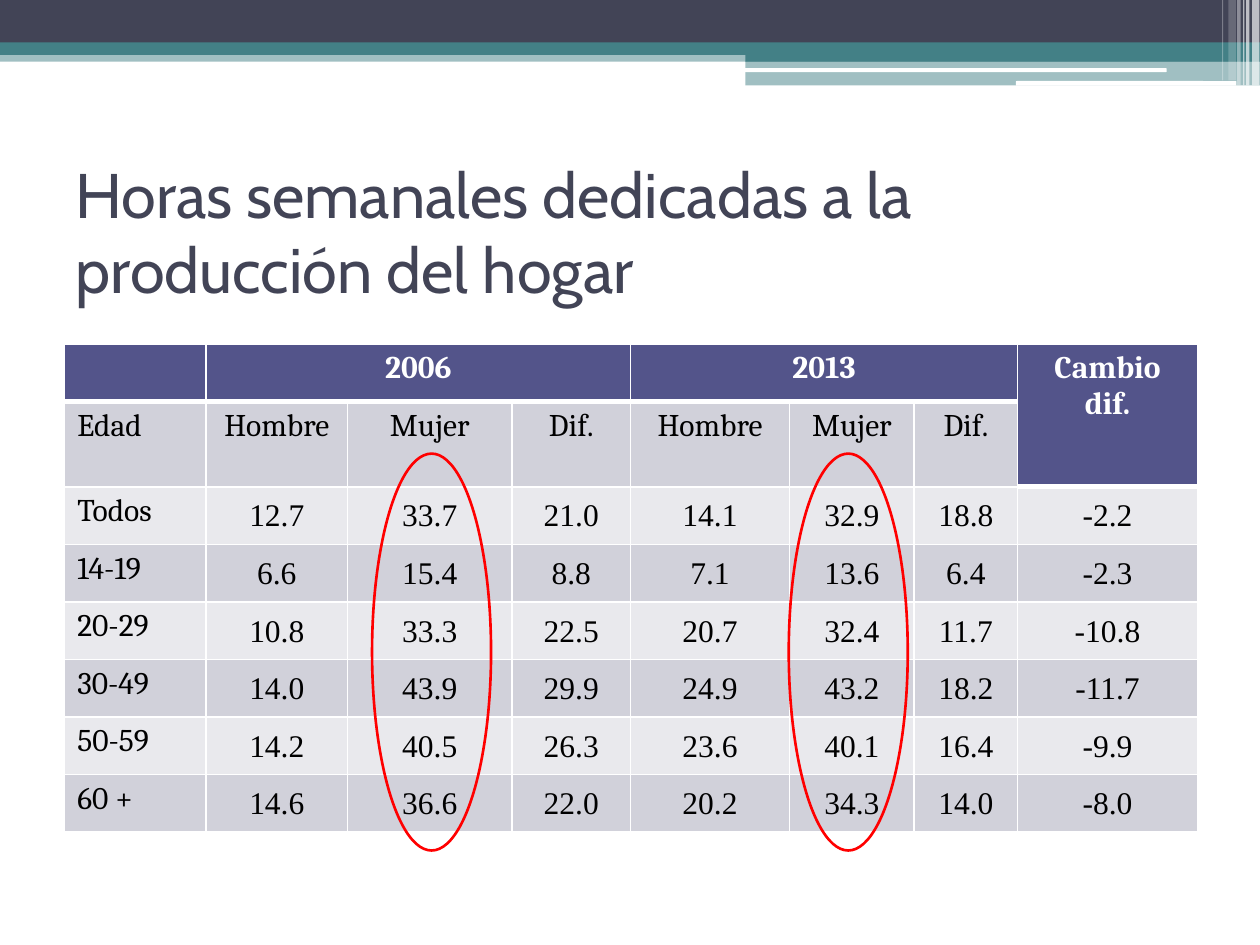
"""Build the slide on weekly hours spent on household production."""
from lxml import etree
from pptx import Presentation
from pptx.dml.color import RGBColor
from pptx.enum.shapes import MSO_SHAPE
from pptx.enum.text import MSO_ANCHOR, MSO_AUTO_SIZE, PP_ALIGN
from pptx.oxml.ns import qn
from pptx.util import Pt

RECT, ROUND, OVAL = MSO_SHAPE.RECTANGLE, MSO_SHAPE.ROUNDED_RECTANGLE, MSO_SHAPE.OVAL
LEFT, CENTER = PP_ALIGN.LEFT, PP_ALIGN.CENTER
TOP, MIDDLE = MSO_ANCHOR.TOP, MSO_ANCHOR.MIDDLE
NO_AUTOFIT = MSO_AUTO_SIZE.NONE

COLORS = {
    "ink": "424456", "teal": "438086", "white": "FFFFFF", "black": "000000",
    "header": "53548A", "dark_row": "D1D1DA", "light_row": "E9E9ED", "ring": "FF0000",
}
BANDS = [
    (RECT, 0, 28.8, 720, 6.5, "teal", 50),
    (RECT, 0, 0, 720, 24.5, "ink", 100),
    (RECT, 0, 24.2, 720, 7.2, "teal", 100),
    (RECT, 426, 28, 294, 7.2, "teal", 100),
    (RECT, 426, 34.8, 294, 14, "teal", 50),
    (ROUND, 425.5, 39, 241.2, 2.2, "white", 100),
    (ROUND, 580.5, 46.3, 126, 2.7, "white", 100),
]
STRIPES = [
    (715.5, 4.2, 48.8, 65), (712, 2, 48.8, 65), (710.4, 0.7, 48.8, 60),
    (707, 2, 48.8, 40), (702, 4.3, 46, 20), (698.3, 0.7, 46, 30),
]
COLUMN_WIDTHS = [80.8, 80.8, 94, 67.8, 90.8, 71.3, 59, 102.9]
ROW_HEIGHT = 32.9
HEADER = ["", "2006", "", "", "2013", "", "", "Cambio dif."]
SUBHEADER = ["Edad"] + ["Hombre", "Mujer", "Dif."] * 2 + [""]
HOURS = [
    ["Todos", "12.7", "33.7", "21.0", "14.1", "32.9", "18.8", "-2.2"],
    ["14-19", "6.6", "15.4", "8.8", "7.1", "13.6", "6.4", "-2.3"],
    ["20-29", "10.8", "33.3", "22.5", "20.7", "32.4", "11.7", "-10.8"],
    ["30-49", "14.0", "43.9", "29.9", "24.9", "43.2", "18.2", "-11.7"],
    ["50-59", "14.2", "40.5", "26.3", "23.6", "40.1", "16.4", "-9.9"],
    ["60 +", "14.6", "36.6", "22.0", "20.2", "34.3", "14.0", "-8.0"],
]
MERGES = [(0, 1, 0, 3), (0, 4, 0, 6), (0, 7, 1, 7)]


def color(name):
    """Return a named colour."""
    return RGBColor.from_string(COLORS[name])


def apply(target, values):
    """Set each attribute of the target from a dict."""
    for name, value in values.items():
        setattr(target, name, value)


class SlideBuilder:
    """Hold the current page and the text style, and add elements to it."""

    def __init__(self, page):
        """Keep the page and the shared table text style."""
        self.page = page
        self.cell_font = {"name": "Cambria", "size": Pt(18), "bold": False}

    def place(self, kind, left, top, width, height):
        """Add a preset shape without a shadow."""
        box = self.page.shapes.add_shape(kind, Pt(left), Pt(top), Pt(width), Pt(height))
        box.shadow.inherit = False
        return box

    def band(self, kind, left, top, width, height, fill, opacity):
        """Add a borderless band with the given opacity in percent."""
        box = self.place(kind, left, top, width, height)
        box.fill.solid()
        box.fill.fore_color.rgb = color(fill)
        box.line.fill.background()
        if opacity < 100:
            tone = box.fill._xPr.find(".//" + qn("a:srgbClr"))
            etree.SubElement(tone, qn("a:alpha"), val=str(opacity * 1000))

    def ring(self, left, top, width, height):
        """Add a hollow ellipse that marks a column."""
        box = self.place(OVAL, left, top, width, height)
        box.fill.background()
        box.line.color.rgb = color("ring")
        box.line.width = Pt(1.5)

    def title(self, text, left, top, width, height):
        """Fill, move and format the title placeholder."""
        box = self.page.shapes.title
        apply(box, {"left": Pt(left), "top": Pt(top), "width": Pt(width), "height": Pt(height)})
        frame = box.text_frame
        frame.text = text
        apply(frame, {"word_wrap": True, "auto_size": NO_AUTOFIT, "vertical_anchor": MIDDLE})
        para = frame.paragraphs[0]
        para.alignment = LEFT
        apply(para.font, {"name": "Cabin", "size": Pt(36), "bold": False})
        para.font.color.rgb = color("ink")

    def header_borders(self, cell):
        """Draw thin white edges and a thick bottom edge on a header cell."""
        properties = cell._tc.get_or_add_tcPr()
        for side, width in (("L", 1), ("R", 1), ("T", 1), ("B", 3)):
            edge = etree.SubElement(properties, qn(f"a:ln{side}"), w=str(Pt(width)))
            fill = etree.SubElement(edge, qn("a:solidFill"))
            etree.SubElement(fill, qn("a:srgbClr"), val=COLORS["white"])

    def cell(self, cell, text, row, column):
        """Write and format one table cell by its position."""
        is_header = row == 0 or (row == 1 and column == 7)
        is_value = row > 1 and column > 0
        if is_header:
            self.header_borders(cell)
        cell.fill.solid()
        row_fill = "dark_row" if row % 2 else "light_row"
        cell.fill.fore_color.rgb = color("header" if is_header else row_fill)
        cell.vertical_anchor = MIDDLE if is_value else TOP
        if is_value:
            apply(cell, {"margin_left": Pt(0.75), "margin_right": Pt(0.75),
                         "margin_top": Pt(0.75), "margin_bottom": Pt(0)})
        para = cell.text_frame.paragraphs[0]
        para.alignment = CENTER if column else LEFT
        if text:
            span = para.add_run()
            span.text = text
            apply(span.font, self.cell_font)
            span.font.bold = is_header
            if is_value:
                span.font.name = "Times New Roman"
            span.font.color.rgb = color("white" if is_header else "black")

    def table(self, rows, left, top):
        """Add the table with its merged headings."""
        table = self.page.shapes.add_table(
            len(rows), len(COLUMN_WIDTHS), Pt(left), Pt(top),
            Pt(sum(COLUMN_WIDTHS)), Pt(ROW_HEIGHT * len(rows))).table
        for column, width in zip(table.columns, COLUMN_WIDTHS):
            column.width = Pt(width)
        for row, texts in enumerate(rows):
            table.rows[row].height = Pt(ROW_HEIGHT)
            for column, text in enumerate(texts):
                self.cell(table.cell(row, column), text, row, column)
        for first_row, first_column, last_row, last_column in MERGES:
            table.cell(first_row, first_column).merge(table.cell(last_row, last_column))


def main():
    """Build and save the deck."""
    deck = Presentation()
    apply(deck, {"slide_width": Pt(720), "slide_height": Pt(540)})
    builder = SlideBuilder(deck.slides.add_slide(deck.slide_layouts[5]))
    for band in BANDS:
        builder.band(*band)
    for left, width, height, opacity in STRIPES:
        builder.band(RECT, left, 0, width, height, "white", opacity)
    builder.title("Horas semanales dedicadas a la producción del hogar", 36, 90, 648, 84)
    builder.table([HEADER, SUBHEADER] + HOURS, 37, 196.5)
    for left in (212.6, 450.7):
        builder.ring(left, 259.2, 68, 226.8)
    deck.save("out.pptx")


if __name__ == "__main__":
    main()
